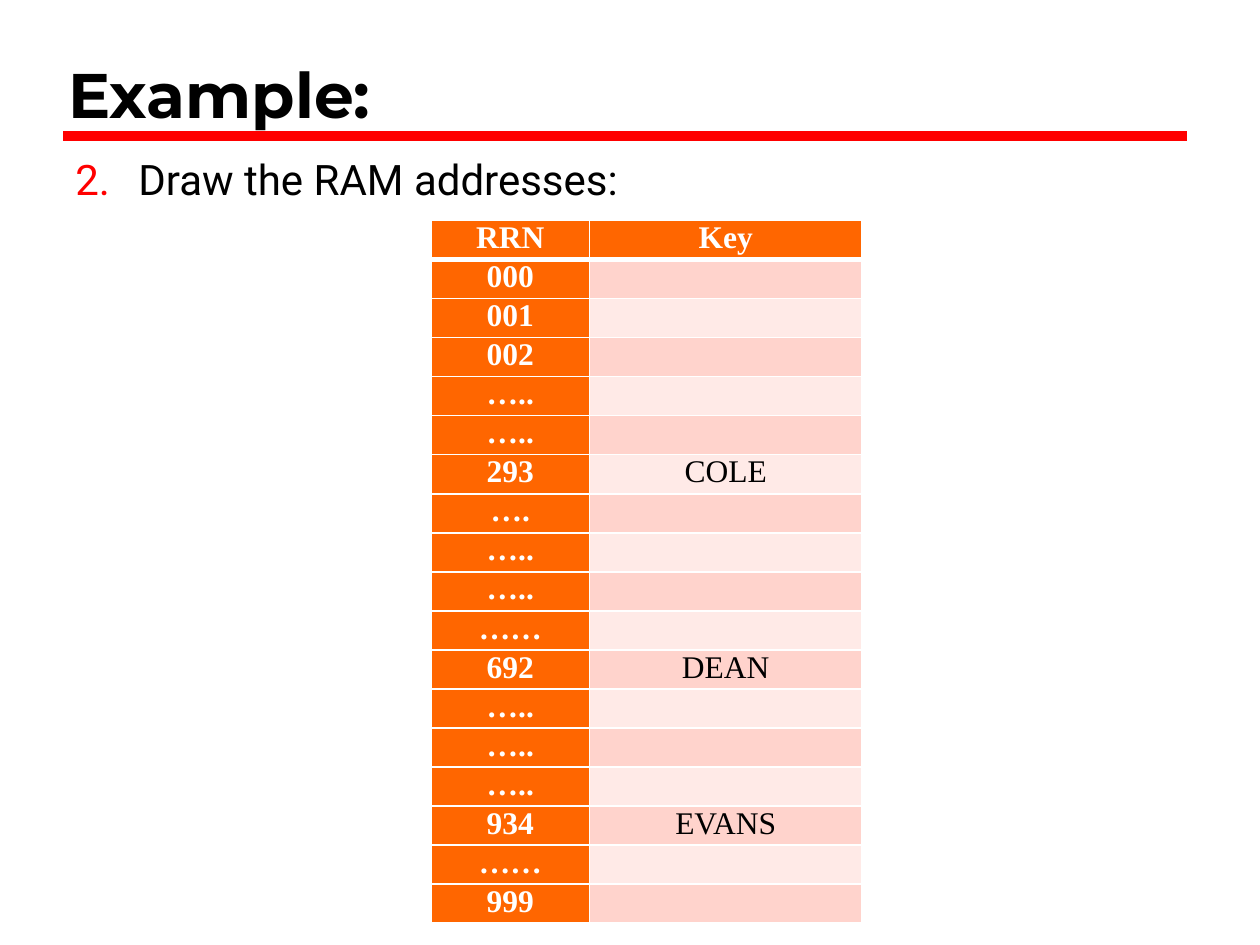
import pptx
import pptx.util
import pptx.dml.color
import pptx.enum.text
import pptx.enum.shapes
import pptx.oxml
import pptx.oxml.ns
from dataclasses import dataclass

COLUMNS, ROWS = 100, 75
ALIGN = pptx.enum.text.PP_ALIGN
ANCHOR = pptx.enum.text.MSO_ANCHOR


@dataclass(frozen=True)
class Theme:
    ink: str = "000000"
    paper: str = "FFFFFF"
    accent: str = "FF0000"
    header: str = "FF6600"
    bands: tuple = ("FFD3CC", "FFEAE7")
    heading_font: str = "Montserrat"
    body_font: str = "Roboto"
    table_font: str = "Times New Roman"
    heading_size: int = 36
    body_size: int = 24
    table_size: int = 18


def apply(target, values):
    for name, value in values.items():
        setattr(target, name, value)


def rgb(color):
    return pptx.dml.color.RGBColor.from_string(color)


def xml_node(parent, tag, **attributes):
    node = pptx.oxml.parse_xml(f"<a:{tag} {pptx.oxml.ns.nsdecls('a')}/>")
    for name, value in attributes.items():
        node.set(name, str(value))
    parent.append(node)
    return node


class Deck:
    def __init__(self, theme):
        self.theme = theme
        self.show = pptx.Presentation()
        apply(self.show, {"slide_width": pptx.util.Inches(10),
                          "slide_height": pptx.util.Inches(7.5)})
        self.slide = self.show.slides.add_slide(self.show.slide_layouts[5])

    def across(self, columns):
        return round(self.show.slide_width * columns / COLUMNS)

    def down(self, rows):
        return round(self.show.slide_height * rows / ROWS)

    def area(self, left, top, width, height):
        return self.across(left), self.down(top), self.across(width), self.down(height)

    def wording(self, paragraph, words, font, size, color, bold=False, align=ALIGN.LEFT):
        paragraph.alignment = align
        run = paragraph.add_run()
        run.text = words
        apply(run.font, {"name": font, "size": pptx.util.Pt(size), "bold": bold})
        run.font.color.rgb = rgb(color)

    def title(self, words, *area):
        heading = self.slide.shapes.title
        apply(heading, dict(zip(("left", "top", "width", "height"), self.area(*area))))
        apply(heading.text_frame, {"vertical_anchor": ANCHOR.BOTTOM, "word_wrap": True,
                                   "auto_size": pptx.enum.text.MSO_AUTO_SIZE.NONE})
        self.wording(heading.text_frame.paragraphs[0], words, self.theme.heading_font,
                     self.theme.heading_size, self.theme.ink, bold=True)

    def rule(self, left, right, row, weight):
        underline = self.slide.shapes.add_connector(
            pptx.enum.shapes.MSO_CONNECTOR.STRAIGHT,
            self.across(left), self.down(row), self.across(right), self.down(row))
        underline.line.color.rgb = rgb(self.theme.accent)
        underline.line.width = pptx.util.Pt(weight)
        xml_node(underline._element.spPr, "effectLst")

    def numbered_step(self, number, words, *area):
        step = self.slide.shapes.add_textbox(*self.area(*area))
        step.text_frame.word_wrap = True
        paragraph = step.text_frame.paragraphs[0]
        self.wording(paragraph, words, self.theme.body_font, self.theme.body_size, self.theme.ink)
        paragraph.space_before = pptx.util.Pt(self.theme.body_size * 0.2)
        layout = paragraph._p.get_or_add_pPr()
        indent = self.across(5)
        layout.set("marL", str(indent))
        layout.set("indent", str(-indent))
        xml_node(xml_node(layout, "buClr"), "srgbClr", val=self.theme.accent)
        xml_node(layout, "buFont", typeface=self.theme.body_font)
        xml_node(layout, "buAutoNum", type="arabicPeriod", startAt=number)

    def cell(self, cell, words, fill, color, bold, weights):
        inset = self.across(0.7)
        apply(cell, {"margin_left": inset, "margin_right": inset,
                     "margin_top": 0, "margin_bottom": 0})
        for side, weight in weights.items():
            border = xml_node(cell._tc.get_or_add_tcPr(), f"ln{side}", w=int(pptx.util.Pt(weight)))
            xml_node(xml_node(border, "solidFill"), "srgbClr", val=self.theme.paper)
        cell.fill.solid()
        cell.fill.fore_color.rgb = rgb(fill)
        if words:
            self.wording(cell.text_frame.paragraphs[0], words, self.theme.table_font,
                         self.theme.table_size, color, bold, ALIGN.CENTER)

    def table(self, records, widths, left, top, height):
        theme = self.theme
        grid = self.slide.shapes.add_table(
            len(records), len(widths), *self.area(left, top, sum(widths), height)).table
        for column, width in zip(grid.columns, widths):
            column.width = self.across(width)
        for row in grid.rows:
            row.height = self.down(height / len(records))
        for r, record in enumerate(records):
            weights = {"L": 1, "R": 1, "T": 3 if r == 1 else 1, "B": 3 if r == 0 else 1}
            for c, words in enumerate(record):
                label = r == 0 or c == 0
                self.cell(grid.cell(r, c), words,
                          theme.header if label else theme.bands[(r - 1) % 2],
                          theme.paper if label else theme.ink, label, weights)


def main():
    addresses = ["000", "001", "002", "…..", "…..", "293", "….", "…..", "…..", "……",
                 "692", "…..", "…..", "…..", "934", "……", "999"]
    keys = {"293": "COLE", "692": "DEAN", "934": "EVANS"}
    records = [("RRN", "Key")] + [(address, keys.get(address, "")) for address in addresses]

    deck = Deck(Theme())
    deck.rule(5, 94.2, 10.8, 6)
    deck.title("Example:", 4.4, 1.7, 89.7, 9.2)
    deck.numbered_step(2, "Draw the RAM addresses:", 5, 11.7, 89.4, 61.7)
    deck.table(records, (12.6, 21.6), 34.2, 17.5, 55.8)
    deck.show.save("out.pptx")


if __name__ == "__main__":
    main()
